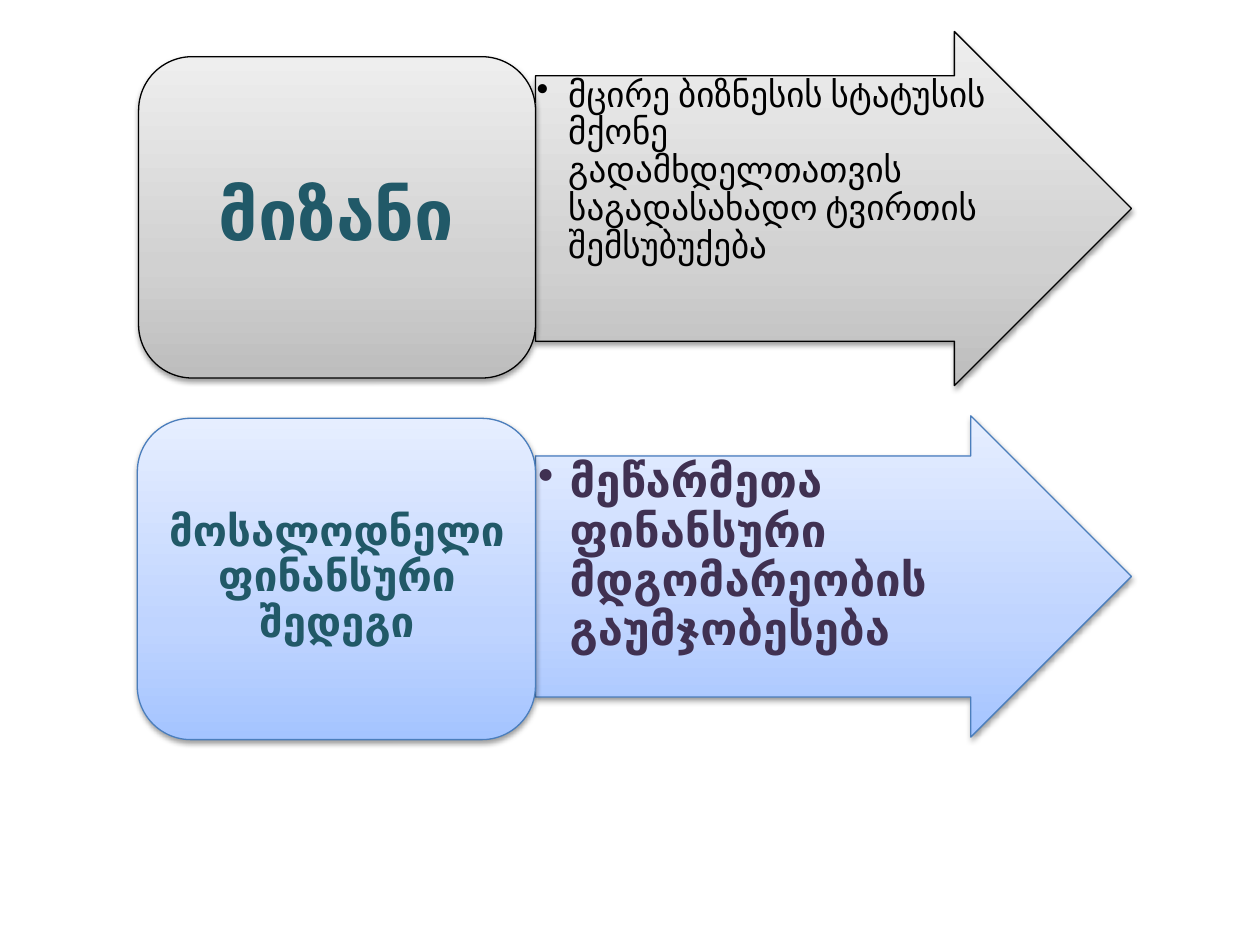
"""Build a slide with two rows, each a rounded label and an arrow with a bullet."""
from copy import deepcopy
from dataclasses import dataclass

from lxml import etree
from pptx import Presentation
from pptx import util as u
from pptx.dml.color import RGBColor
from pptx.enum import shapes, text
from pptx.oxml import ns

WIDTH, HEIGHT = u.Inches(10), u.Inches(7.5)
COLUMNS, ROWS = 100, 75
FONT = "Calibri"
COLORS = {
    "black": "000000", "blue": "4B7EBC", "teal": "215968", "purple": "403152",
    "grey_dark": "BDBDBD", "grey_mid": "D1D1D1", "grey_light": "EEEEEE",
    "sky_dark": "A4C4FF", "sky_mid": "BFD4FF", "sky_light": "E6EEFF",
}
STOPS = (0, 0.35, 1)


@dataclass(frozen=True)
class Box:
    left: float
    top: float
    width: float
    height: float

    def place(self) -> tuple[int, int, int, int]:
        dx, dy = WIDTH / COLUMNS, HEIGHT / ROWS
        return (round(self.left * dx), round(self.top * dy),
                round(self.width * dx), round(self.height * dy))


@dataclass(frozen=True)
class Caption:
    words: str
    box: Box
    size: int
    color: str
    bold: bool
    insets: tuple[float, float]
    bullet: bool


@dataclass(frozen=True)
class Band:
    shade: str
    outline: str
    arrow: Box
    label: Box
    message: Caption
    title: Caption


BANDS = (
    Band("grey", "black", Box(42.5, 2.5, 47.3, 28.1), Box(11, 4.5, 31.5, 25.5),
         Caption("მცირე ბიზნესის სტატუსის მქონე გადამხდელთათვის საგადასახადო ტვირთის შემსუბუქება",
                 Box(42.5, 6, 36.8, 21.1), 20, "black", False, (0.01, 0.01), True),
         Caption("მიზანი", Box(12.2, 5.8, 29, 23), 40, "teal", True, (0.17, 0.08), False)),
    Band("sky", "blue", Box(42.5, 33, 47.3, 25.5), Box(10.9, 33.2, 31.6, 25.5),
         Caption("მეწარმეთა ფინანსური მდგომარეობის გაუმჯობესება",
                 Box(42.5, 36.2, 37.8, 19.2), 26, "purple", True, (0.02, 0.02), True),
         Caption("მოსალოდნელი ფინანსური შედეგი",
                 Box(12.2, 34.4, 29.1, 23), 24, "teal", True, (0.1, 0.05), False)),
)


def rgb(name: str) -> RGBColor:
    return RGBColor.from_string(COLORS[name])


def add(parent, tag: str, **attrs):
    return etree.SubElement(parent, ns.qn(tag), attrs)


def draw_shape(s, kind, box: Box, shade: str, outline: str):
    sp = s.shapes.add_shape(kind, *box.place())
    sp.fill.gradient()
    sp.fill.gradient_angle = 90
    stop_list = next(sp._element.iter(ns.qn("a:gsLst")))
    stop_list.append(deepcopy(stop_list[0]))
    for stop, position, tone in zip(sp.fill.gradient_stops, STOPS, ("dark", "mid", "light")):
        stop.position = position
        stop.color.rgb = rgb(f"{shade}_{tone}")
    sp.line.color.rgb = rgb(outline)
    sp.line.width = u.Pt(0.75)
    sp.shadow.inherit = False
    effects = next(sp._element.iter(ns.qn("a:effectLst")))
    shadow = add(effects, "a:outerShdw", blurRad="40000", dist="20000",
                 dir="5400000", rotWithShape="0")
    add(add(shadow, "a:srgbClr", val=COLORS["black"]), "a:alpha", val="38000")
    return sp


def draw_caption(s, caption: Caption) -> None:
    tf = s.shapes.add_textbox(*caption.box.place()).text_frame
    tf.word_wrap = True
    tf.margin_left = tf.margin_right = u.Inches(caption.insets[0])
    tf.margin_top = tf.margin_bottom = u.Inches(caption.insets[1])
    p = tf.paragraphs[0]
    p.line_spacing = 0.9
    pr = p._p.get_or_add_pPr()
    after = "15000" if caption.bullet else "35000"
    add(add(pr, "a:spcAft"), "a:spcPct", val=after)
    if caption.bullet:
        p.level = 1
        p.alignment = text.PP_ALIGN.LEFT
        pr.set("marL", str(u.Inches(0.25)))
        pr.set("indent", str(u.Inches(-0.25)))
        add(pr, "a:buChar", char="•")
    else:
        p.alignment = text.PP_ALIGN.CENTER
        tf.vertical_anchor = text.MSO_ANCHOR.MIDDLE
    r = p.add_run()
    r.text = caption.words
    r.font.name = FONT
    r.font.size = u.Pt(caption.size)
    r.font.bold = caption.bold
    r.font.color.rgb = rgb(caption.color)


def draw_band(s, band: Band) -> None:
    arrow = draw_shape(s, shapes.MSO_SHAPE.RIGHT_ARROW, band.arrow, band.shade, band.outline)
    arrow.adjustments[0] = 0.75
    arrow.adjustments[1] = 0.5
    draw_caption(s, band.message)
    draw_shape(s, shapes.MSO_SHAPE.ROUNDED_RECTANGLE, band.label, band.shade, band.outline)
    draw_caption(s, band.title)


def main() -> None:
    prs = Presentation()
    prs.slide_width, prs.slide_height = WIDTH, HEIGHT
    s = prs.slides.add_slide(prs.slide_layouts[6])
    for band in BANDS:
        draw_band(s, band)
    prs.save("out.pptx")


if __name__ == "__main__":
    main()
